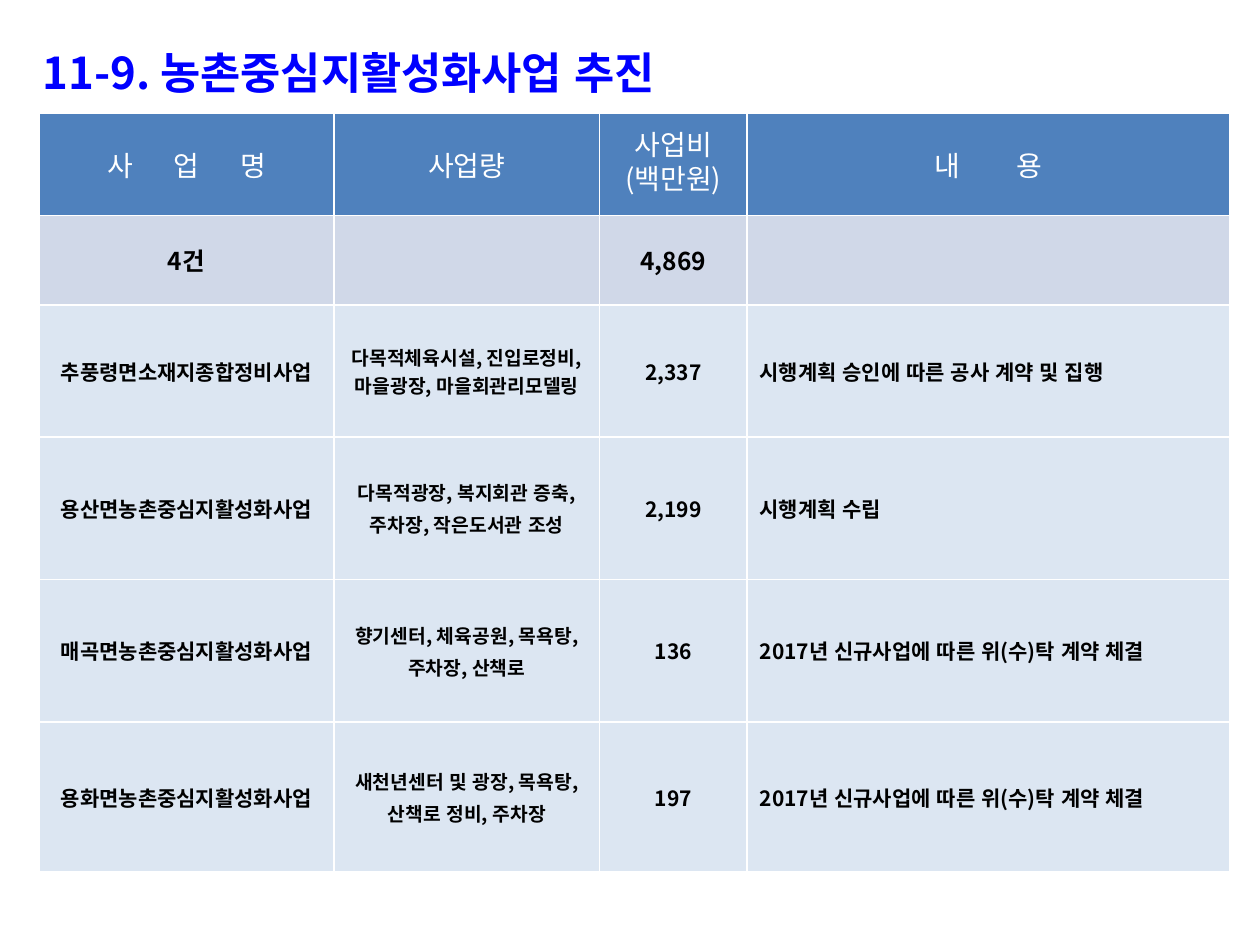
from lxml.etree import SubElement
from pptx import Presentation
from pptx.dml.color import RGBColor
from pptx.enum.lang import MSO_LANGUAGE_ID
from pptx.enum.text import MSO_ANCHOR, MSO_AUTO_SIZE, PP_ALIGN
from pptx.oxml.ns import qn
from pptx.util import Inches, Pt

FONT = "Noto Sans CJK KR"
BLUE = RGBColor(0x00, 0x00, 0xFF)
WHITE = RGBColor(0xFF, 0xFF, 0xFF)
BLACK = RGBColor(0x00, 0x00, 0x00)
HEADER_FILL = RGBColor(0x4F, 0x81, 0xBD)
TOTAL_FILL = RGBColor(0xD0, 0xD8, 0xE8)
PROJECT_FILL = RGBColor(0xDC, 0xE6, 0xF2)

COL_WIDTHS = [2.34, 2.11, 1.17, 3.83]
ROW_HEIGHTS = [0.81, 0.71, 1.05, 1.13, 1.13, 1.19]
HEADER_TRACKING = {0: 9.4, 3: 13.7}
ROWS = [
    ["사 업 명", "사업량", "사업비\n(백만원)", "내 용"],
    ["4건", "", "4,869", ""],
    ["추풍령면소재지종합정비사업", "다목적체육시설, 진입로정비, 마을광장, 마을회관리모델링",
     "2,337", "시행계획 승인에 따른 공사 계약 및 집행"],
    ["용산면농촌중심지활성화사업", "다목적광장, 복지회관 증축,\n주차장, 작은도서관 조성",
     "2,199", "시행계획 수립"],
    ["매곡면농촌중심지활성화사업", "향기센터, 체육공원, 목욕탕,\n주차장, 산책로",
     "136", "2017년 신규사업에 따른 위(수)탁 계약 체결"],
    ["용화면농촌중심지활성화사업", "새천년센터 및 광장, 목욕탕,\n산책로 정비, 주차장",
     "197", "2017년 신규사업에 따른 위(수)탁 계약 체결"],
]


def format_run(r, size, color, bold):
    """Set the Korean font, size, colour and weight of a run."""
    r.font.name = FONT
    r.font.size = Pt(size)
    r.font.bold = bold
    r.font.color.rgb = color
    r.font.language_id = MSO_LANGUAGE_ID.KOREAN
    SubElement(r.font._element, qn("a:ea"), typeface=FONT)


def set_borders(cell):
    """Draw thin white lines on all four sides of a cell."""
    tcPr = cell._tc.get_or_add_tcPr()
    for i, side in enumerate(("a:lnL", "a:lnR", "a:lnT", "a:lnB")):
        ln = tcPr.makeelement(qn(side), {"w": str(Pt(1))})
        fill = SubElement(ln, qn("a:solidFill"))
        SubElement(fill, qn("a:srgbClr"), val=str(WHITE))
        tcPr.insert(i, ln)


def track_letters(p, points):
    """Spread the letters of a paragraph, leaving no gap after the last."""
    text = p.text
    p.runs[0].text = text[:-1]
    p.runs[0].font._element.set("spc", str(round(points * 100)))
    p.add_run().text = text[-1]


def fill_cell(cell, text, row, col):
    """Write and style one cell according to its row and column."""
    header = row == 0
    size = 16 if header else 14 if row == 1 else 11 if col == 1 else 12
    cell.fill.solid()
    cell.fill.fore_color.rgb = (HEADER_FILL, TOTAL_FILL)[row] if row < 2 else PROJECT_FILL
    set_borders(cell)
    cell.vertical_anchor = MSO_ANCHOR.MIDDLE
    cell.text_frame.text = text
    for p in cell.text_frame.paragraphs:
        p.alignment = PP_ALIGN.LEFT if col == 3 and not header else PP_ALIGN.CENTER
        p.space_before = Pt(size * 0.2)
        if header and col == 2:
            p.line_spacing = 0.7
        if header and col in HEADER_TRACKING:
            track_letters(p, HEADER_TRACKING[col])
        for r in p.runs:
            format_run(r, size, WHITE if header else BLACK, not header)


def add_title(slide, left, top, width, height):
    """Place the slide heading in the title placeholder."""
    title = slide.shapes.title
    title.left, title.top, title.width, title.height = left, top, width, height
    tf = title.text_frame
    tf.text = "11-9. 농촌중심지활성화사업 추진"
    tf.word_wrap = True
    tf.auto_size = MSO_AUTO_SIZE.NONE
    tf.vertical_anchor = MSO_ANCHOR.TOP
    p = tf.paragraphs[0]
    p.alignment = PP_ALIGN.LEFT
    p.line_spacing = 1.2
    format_run(p.runs[0], 25, BLUE, True)


def add_project_table(slide, left, top, width, height):
    """Place the table of projects, scaled to the given box."""
    table = slide.shapes.add_table(len(ROWS), len(COL_WIDTHS), left, top, width, height).table
    for column, share in zip(table.columns, COL_WIDTHS):
        column.width = round(width * share / sum(COL_WIDTHS))
    for table_row, share in zip(table.rows, ROW_HEIGHTS):
        table_row.height = round(height * share / sum(ROW_HEIGHTS))
    for row, texts in enumerate(ROWS):
        for col, text in enumerate(texts):
            fill_cell(table.cell(row, col), text, row, col)


def main():
    """Build and save the slide."""
    prs = Presentation()
    prs.slide_width, prs.slide_height = Inches(10), Inches(7.5)
    slide = prs.slides.add_slide(prs.slide_layouts[5])
    add_title(slide, Inches(0.24), Inches(0.23), Inches(9.52), Inches(0.65))
    add_project_table(slide, Inches(0.31), Inches(0.9), Inches(9.45), Inches(6.02))
    prs.save("out.pptx")


if __name__ == "__main__":
    main()
